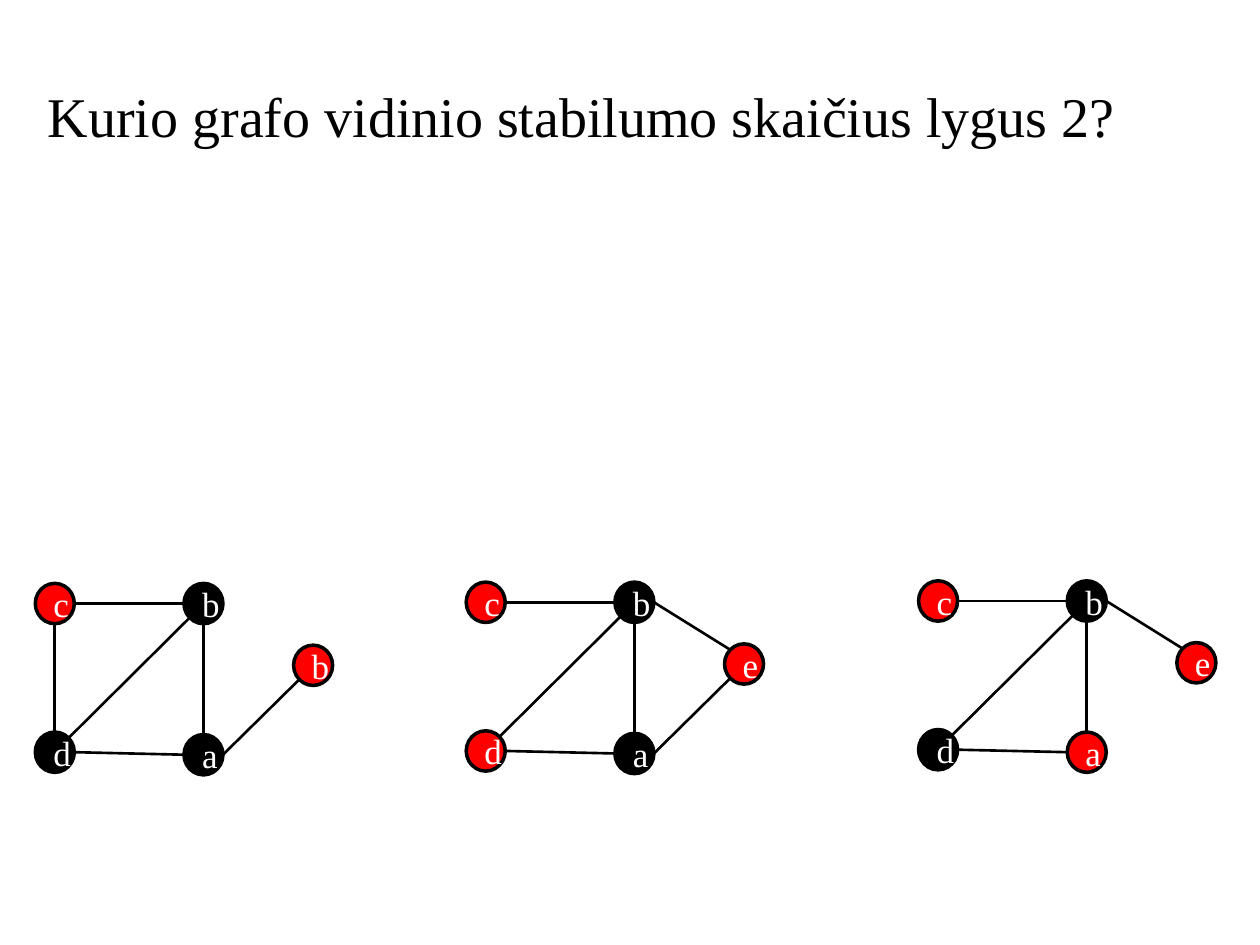
from dataclasses import dataclass
from math import sqrt

from lxml.etree import SubElement
from pptx import Presentation
from pptx.dml.color import RGBColor as RGB
from pptx.enum.shapes import MSO_CONNECTOR as Connector, MSO_SHAPE as Shape
from pptx.enum.text import MSO_ANCHOR as Anchor, MSO_AUTO_SIZE as AutoSize, PP_ALIGN as Align
from pptx.oxml.ns import qn
from pptx.util import Inches, Pt


@dataclass(frozen=True)
class Theme:
    font: str = "Times New Roman"
    ink: RGB = RGB(0, 0, 0)
    chosen: RGB = RGB(255, 0, 0)
    label: RGB = RGB(255, 255, 255)
    title_size: int = 32
    label_size: int = 20
    outline: float = 2
    edge: float = 1.5


THEME = Theme()
TITLE = "Kurio grafo vidinio stabilumo skaičius lygus 2?"

# Top left corner of each vertex, relative to its graph
VERTICES = {"c": (0, 0), "b": (1.18, 0), "d": (0, 1.18), "a": (1.18, 1.2), "e": (2.05, 0.49)}
NODE_W, NODE_H = 0.31, 0.32

# Compass points on a circle, in radii
DIAGONAL = 1 / sqrt(2)
COMPASS = {
    "N": (0, -1), "S": (0, 1), "E": (1, 0), "W": (-1, 0),
    "NE": (DIAGONAL, -DIAGONAL), "NW": (-DIAGONAL, -DIAGONAL), "SW": (-DIAGONAL, DIAGONAL),
}
# Edge: vertex and compass point at each end
EDGES = {
    "cb": ("E", "W"), "da": ("E", "W"), "db": ("NE", "SW"), "ba": ("S", "N"),
    "eb": ("NW", "E"), "ae": ("E", "SW"), "dc": ("N", "S"),
}
GRAPHS = [
    {"at": (7.29, 4.61), "chosen": "cae", "edges": ("cb", "da", "db", "ba", "eb"), "labels": {}},
    {"at": (3.7, 4.62), "chosen": "cde", "edges": ("cb", "da", "db", "ba", "eb", "ae"), "labels": {}},
    {"at": (0.28, 4.63), "chosen": "ce", "edges": ("cb", "da", "db", "ba", "dc", "ae"),
     "labels": {"e": "b"}},
]


def add_text(frame, text, size, color, align):
    paragraph = frame.paragraphs[0]
    paragraph.alignment = align
    run = paragraph.add_run()
    run.text = text
    run.font.name, run.font.size = THEME.font, Pt(size)
    run.font.color.rgb = color


def add_vertex(group, left, top, label, fill):
    circle = group.shapes.add_shape(
        Shape.OVAL, Inches(left), Inches(top), Inches(NODE_W), Inches(NODE_H))
    circle.shadow.inherit = False
    circle.fill.solid()
    circle.fill.fore_color.rgb = fill
    circle.line.color.rgb = THEME.ink
    circle.line.width = Pt(THEME.outline)
    circle.text_frame.vertical_anchor = Anchor.MIDDLE
    add_text(circle.text_frame, label, THEME.label_size, THEME.label, Align.CENTER)


def add_edge(group, start, end):
    line = group.shapes.add_connector(
        Connector.STRAIGHT, *(Inches(length) for length in (*start, *end)))
    line.line.color.rgb = THEME.ink
    line.line.width = Pt(THEME.edge)
    SubElement(line._element.spPr, qn("a:effectLst"))


def add_graph(slide, graph):
    x, y = graph["at"]
    group = slide.shapes.add_group_shape()
    for vertex, (dx, dy) in VERTICES.items():
        fill = THEME.chosen if vertex in graph["chosen"] else THEME.ink
        add_vertex(group, x + dx, y + dy, graph["labels"].get(vertex, vertex), fill)

    def rim(vertex, point):
        """Where a compass point lies on the rim of a vertex."""
        (dx, dy), (east, south) = VERTICES[vertex], COMPASS[point]
        return x + dx + NODE_W / 2 * (1 + east), y + dy + NODE_H / 2 * (1 + south)

    for edge in graph["edges"]:
        add_edge(group, *(rim(vertex, point) for vertex, point in zip(edge, EDGES[edge])))


def main():
    deck = Presentation()
    deck.slide_width, deck.slide_height = Inches(10), Inches(7.5)
    slide = deck.slides.add_slide(deck.slide_layouts[5])

    title = slide.shapes.title
    title.left, title.top, title.width, title.height = map(Inches, (0.28, 0.6, 9.53, 0.64))
    title.text_frame.vertical_anchor = Anchor.TOP
    title.text_frame.word_wrap = True
    title.text_frame.auto_size = AutoSize.NONE
    add_text(title.text_frame, TITLE, THEME.title_size, THEME.ink, Align.LEFT)

    for graph in GRAPHS:
        add_graph(slide, graph)
    deck.save("out.pptx")


if __name__ == "__main__":
    main()
